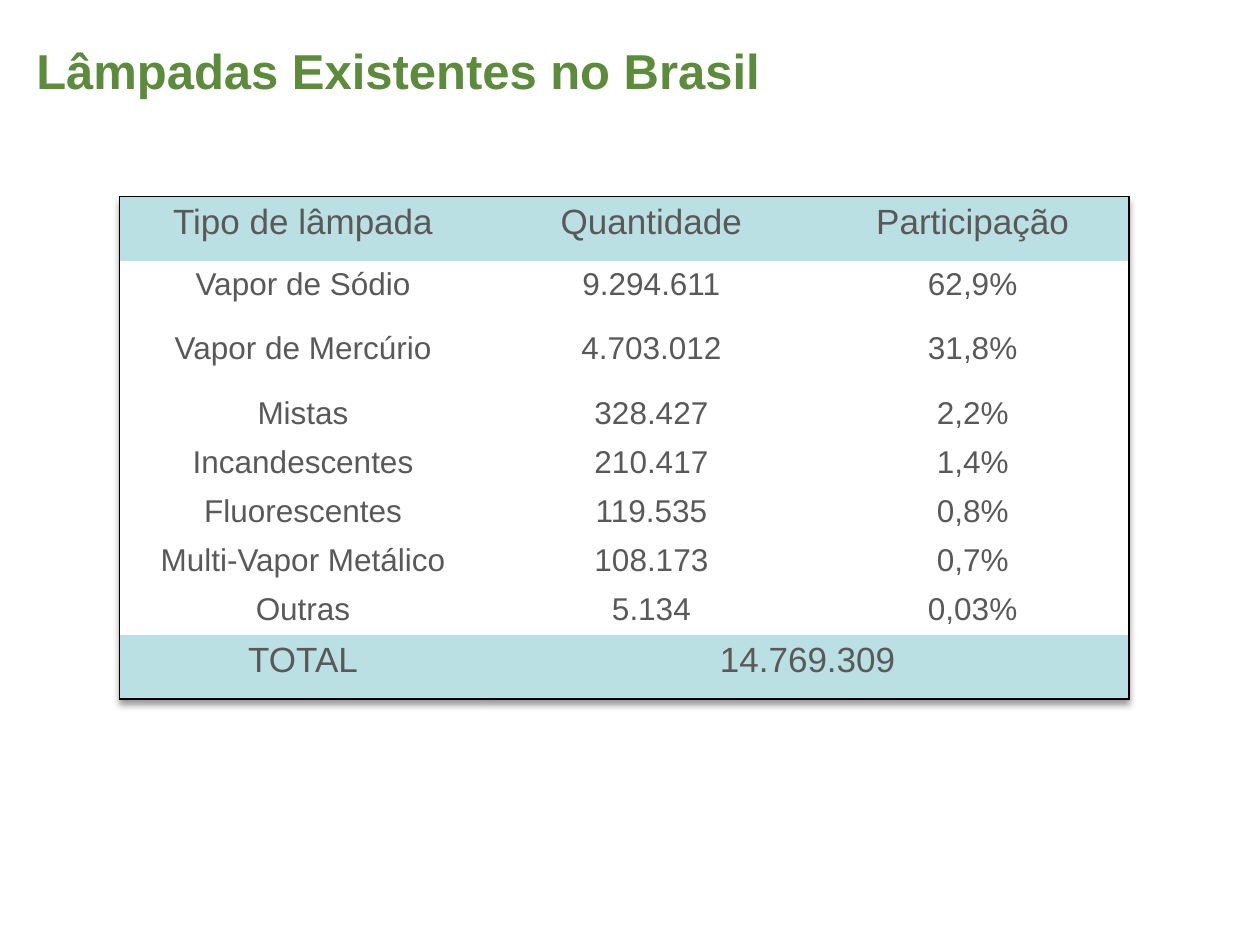
from lxml.etree import SubElement, fromstring
from pptx import Presentation
from pptx.dml.color import RGBColor
from pptx.enum.text import PP_ALIGN
from pptx.oxml.ns import qn
from pptx.util import Inches, Pt

GREEN = RGBColor(0x5B, 0x8B, 0x3B)
GRAY = RGBColor(0x59, 0x59, 0x59)
AQUA = RGBColor(0xBB, 0xE0, 0xE3)
WHITE = RGBColor(0xFF, 0xFF, 0xFF)
BLACK = RGBColor(0, 0, 0)

FONT = "Arial"
WIDE, HIGH = 10, 7.5
COLS = [2.91, 2.62, 2.48]
TALL, LOW = 0.51, 0.39
LAMPS = [
    ("Tipo de lâmpada", "Quantidade", "Participação"),
    ("Vapor de Sódio", "9.294.611", "62,9%"),
    ("Vapor de Mercúrio", "4.703.012", "31,8%"),
    ("Mistas", "328.427", "2,2%"),
    ("Incandescentes", "210.417", "1,4%"),
    ("Fluorescentes", "119.535", "0,8%"),
    ("Multi-Vapor Metálico", "108.173", "0,7%"),
    ("Outras", "5.134", "0,03%"),
    ("TOTAL", "14.769.309", ""),
]
ROWS = [TALL] * 3 + [LOW] * 5 + [TALL]
SHADOW = """<a:effectLst xmlns:a="http://schemas.openxmlformats.org/drawingml/2006/main">
<a:outerShdw blurRad="50800" dist="38100" dir="5400000" algn="t" rotWithShape="0">
<a:srgbClr val="000000"><a:alpha val="40000"/></a:srgbClr></a:outerShdw></a:effectLst>"""


def style(para, size, color, bold=False):
    font = para.font
    font.name, font.size, font.bold = FONT, Pt(size), bold
    font.color.rgb = color


def add_title(slide, text):
    box = slide.shapes.add_textbox(
        Inches(0.019 * WIDE), Inches(0.036 * HIGH), Inches(0.988 * WIDE), Inches(0.08 * HIGH))
    box.text_frame.word_wrap = True
    para = box.text_frame.paragraphs[0]
    para.text = text
    style(para, 28, GREEN, True)


def frame(cell, edges):
    """Draw a black line on the named edges and none on the rest."""
    props = cell._tc.get_or_add_tcPr()
    for side in "LRTB":
        line = SubElement(props, qn(f"a:ln{side}"), w=str(Pt(1) if side in edges else 0))
        if side in edges:
            fill = SubElement(line, qn("a:solidFill"))
            SubElement(fill, qn("a:srgbClr"), val=str(BLACK))
        else:
            SubElement(line, qn("a:noFill"))


def fill_cell(cell, text, strong, edges):
    frame(cell, edges)
    cell.fill.solid()
    cell.fill.fore_color.rgb = AQUA if strong else WHITE
    para = cell.text_frame.paragraphs[0]
    para.text = text
    para.alignment = PP_ALIGN.CENTER
    props = para._p.get_or_add_pPr()
    props.set("marL", str(Inches(0.38)))
    props.set("indent", str(Inches(-0.38)))
    style(para, 20 if strong else 18, GRAY)


def add_grid(slide):
    table = slide.shapes.add_table(
        len(ROWS), len(COLS), Inches(0.095 * WIDE), Inches(0.208 * HIGH),
        Inches(sum(COLS)), Inches(sum(ROWS))).table
    table.horz_banding = table.first_row = False
    table._tbl.tblPr.insert(0, fromstring(SHADOW))
    for col, width in zip(table.columns, COLS):
        col.width = Inches(width)
    for row, height in zip(table.rows, ROWS):
        row.height = Inches(height)
    end, right = len(ROWS) - 1, len(COLS) - 1
    table.cell(end, 1).merge(table.cell(end, right))
    for r, lamp in enumerate(LAMPS):
        for c, text in enumerate(lamp):
            cell = table.cell(r, c)
            last = c == right or cell.is_merge_origin
            edges = "L" * (c == 0) + "R" * last + "T" * (r == 0) + "B" * (r == end)
            fill_cell(cell, text, r in (0, end), edges)


def main():
    deck = Presentation()
    deck.slide_width, deck.slide_height = Inches(WIDE), Inches(HIGH)
    slide = deck.slides.add_slide(deck.slide_layouts[6])
    add_grid(slide)
    add_title(slide, "Lâmpadas Existentes no Brasil")
    deck.save("out.pptx")


if __name__ == "__main__":
    main()
